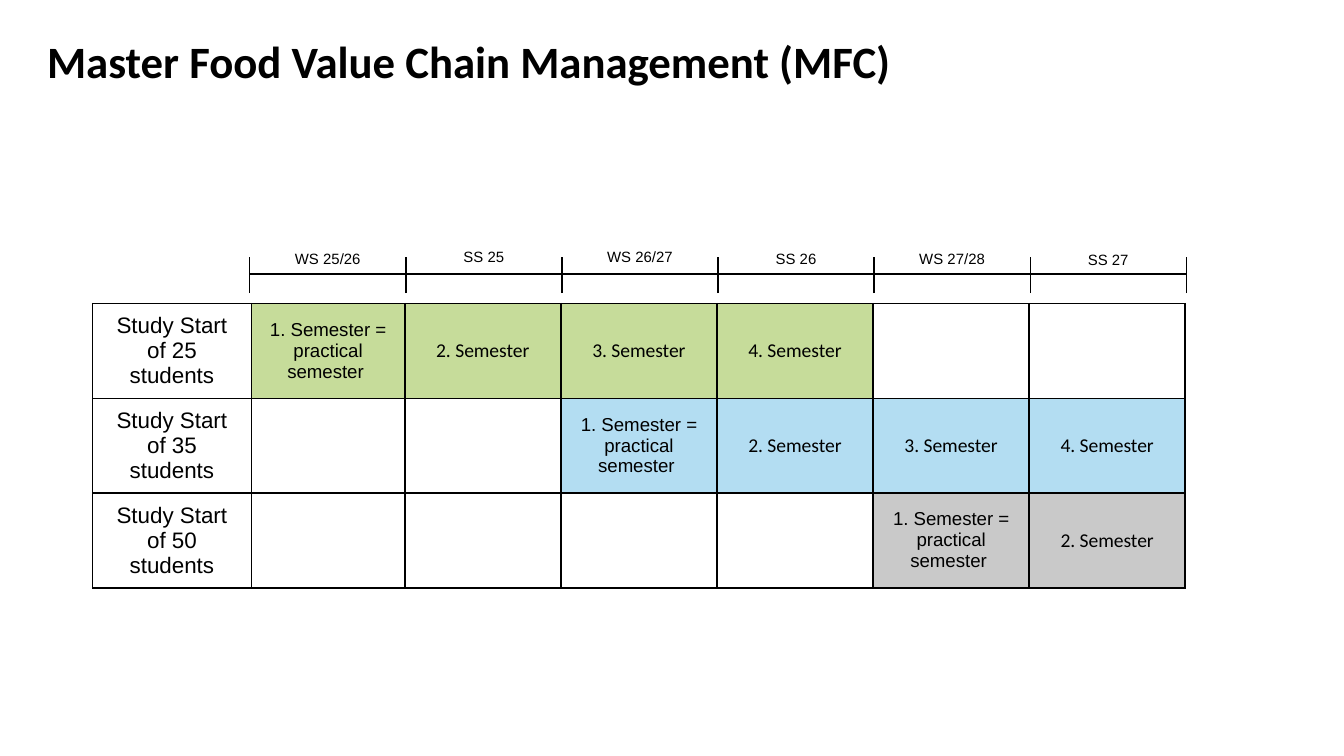
from lxml import etree
from pptx import Presentation
from pptx.dml.color import RGBColor
from pptx.enum.shapes import MSO_CONNECTOR
from pptx.enum.text import MSO_ANCHOR, MSO_AUTO_SIZE, PP_ALIGN
from pptx.oxml import parse_xml
from pptx.oxml.ns import nsdecls, qn
from pptx.util import Cm, Pt

BLACK = RGBColor(0x00, 0x00, 0x00)
GREEN = RGBColor(0xC6, 0xDC, 0x9A)
BLUE = RGBColor(0xB3, 0xDD, 0xF2)
GREY = RGBColor(0xC9, 0xC9, 0xC9)

TITLE_FONT = {"name": "Calibri", "size": Pt(24), "bold": True}
START_FONT = {"name": "Arial", "size": Pt(12)}
PRACTICE_FONT = {"name": "Arial", "size": Pt(10)}
SEMESTER_FONT = {"name": "Calibri", "size": Pt(10.5)}
TERM_FONT = {"name": "Arial", "size": Pt(8)}

SEMESTERS = ["1. Semester = practical semester ", "2. Semester", "3. Semester", "4. Semester"]
COHORTS = [(25, 1, 4, GREEN), (35, 3, 4, BLUE), (50, 5, 2, GREY)]
TERMS = [
    ("WS 25/26", 1.78, 4.6),
    ("SS 25", 1.3, 4.55),
    ("WS 26/27", 1.78, 4.55),
    ("SS 26", 1.3, 4.6),
    ("WS 27/28", 1.78, 4.6),
    ("SS 27", 1.3, 4.62),
]

COL_WIDTHS = [3.0, 2.9] + [2.95] * 5
ROW_HEIGHT = 1.79
AXIS_LEFT, AXIS_Y = 4.72, 5.18
TERM_WIDTH = 2.95
TICK_TOP, TICK_BOTTOM = 4.85, 5.54


def write(tf, text, font, align=PP_ALIGN.CENTER):
    p = tf.paragraphs[0]
    p.alignment = align
    r = p.add_run()
    r.text = text
    for key, value in font.items():
        setattr(r.font, key, value)
    r.font.color.rgb = BLACK


def add_title(s, text):
    tf = s.shapes.add_textbox(Cm(0.89), Cm(0.64), Cm(20.65), Cm(1.24)).text_frame
    tf.word_wrap = True
    for side in ("left", "top", "right", "bottom"):
        setattr(tf, f"margin_{side}", 0)
    write(tf, text, TITLE_FONT, PP_ALIGN.LEFT)


def add_line(s, x1, y1, x2, y2):
    line = s.shapes.add_connector(MSO_CONNECTOR.STRAIGHT, Cm(x1), Cm(y1), Cm(x2), Cm(y2))
    line.line.color.rgb = BLACK
    line.line.width = Pt(0.75)
    etree.SubElement(line._element.spPr, qn("a:effectLst"))


def add_term(s, text, center, width, top):
    box = s.shapes.add_textbox(Cm(center - width / 2), Cm(top), Cm(width), Cm(0.6))
    tf = box.text_frame
    tf.word_wrap = False
    tf.auto_size = MSO_AUTO_SIZE.SHAPE_TO_FIT_TEXT
    write(tf, text, TERM_FONT)


def add_timeline(s):
    add_line(s, AXIS_LEFT, AXIS_Y, AXIS_LEFT + len(TERMS) * TERM_WIDTH, AXIS_Y)
    for i in range(len(TERMS) + 1):
        x = AXIS_LEFT + i * TERM_WIDTH
        add_line(s, x, TICK_BOTTOM, x, TICK_TOP)
    for i, (text, width, top) in enumerate(TERMS):
        add_term(s, text, AXIS_LEFT + (i + 0.5) * TERM_WIDTH, width, top)


def set_borders(cell):
    tc_pr = cell._tc.get_or_add_tcPr()
    for i, tag in enumerate(("lnL", "lnR", "lnT", "lnB")):
        tc_pr.insert(i, parse_xml(
            f'<a:{tag} {nsdecls("a")} w="{Pt(1)}"><a:solidFill>'
            f'<a:srgbClr val="{BLACK}"/></a:solidFill></a:{tag}>'))


def add_plan(s):
    frame = s.shapes.add_table(len(COHORTS), len(COL_WIDTHS), Cm(1.75), Cm(5.74),
                               Cm(sum(COL_WIDTHS)), Cm(ROW_HEIGHT * len(COHORTS)))
    table = frame.table
    table.first_row = table.horz_banding = False
    for col, width in zip(table.columns, COL_WIDTHS):
        col.width = Cm(width)
    for row in table.rows:
        row.height = Cm(ROW_HEIGHT)
    for cell in table.iter_cells():
        cell.vertical_anchor = MSO_ANCHOR.MIDDLE
        cell.fill.background()
        set_borders(cell)
    for row, (students, first, count, color) in enumerate(COHORTS):
        write(table.cell(row, 0).text_frame, f"Study Start of {students} students", START_FONT)
        for i, text in enumerate(SEMESTERS[:count]):
            cell = table.cell(row, first + i)
            cell.fill.solid()
            cell.fill.fore_color.rgb = color
            write(cell.text_frame, text, SEMESTER_FONT if i else PRACTICE_FONT)


def main():
    prs = Presentation()
    prs.slide_width, prs.slide_height = Cm(25.4), Cm(14.29)
    s = prs.slides.add_slide(prs.slide_layouts[6])
    add_title(s, "Master Food Value Chain Management (MFC)")
    add_plan(s)
    add_timeline(s)
    prs.save("out.pptx")


if __name__ == "__main__":
    main()
